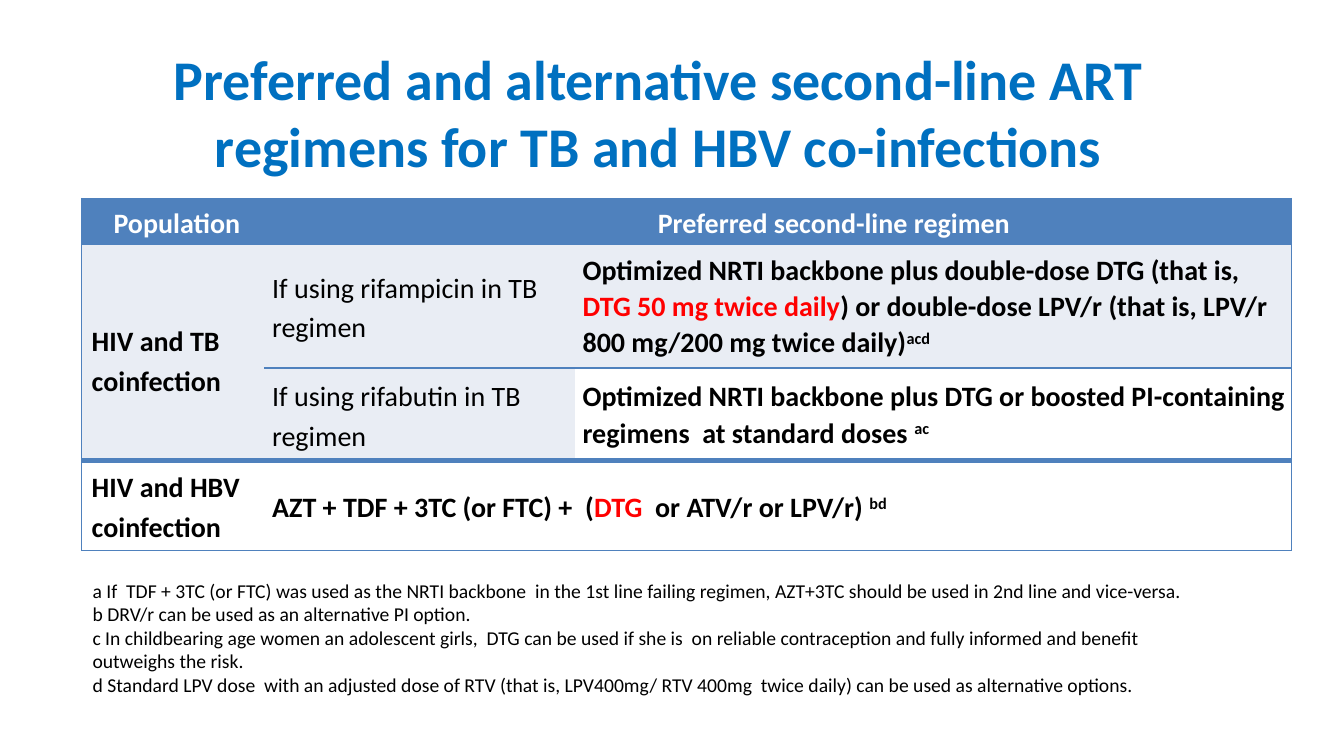
"""Build the slide on second-line ART regimens for TB and HBV co-infections."""
from dataclasses import dataclass

from lxml import etree
from pptx import Presentation
from pptx import util as u
from pptx.dml.color import RGBColor
from pptx.enum import text
from pptx.oxml import ns


@dataclass(frozen=True)
class Theme:
    """Colours, font and type sizes."""
    font: str = "Calibri"
    title: str = "0070C0"
    rule: str = "4F81BD"
    band: str = "E9EDF4"
    white: str = "FFFFFF"
    ink: str = "000000"
    accent: str = "FF0000"
    title_size: int = 40
    table_size: int = 20
    note_size: int = 14


class SlideBuilder:
    """Draw elements on one slide, measured on a grid of 160 columns by 90 rows."""

    def __init__(self, presentation, theme):
        """Add a blank slide and work out the grid."""
        self.theme = theme
        self.column = presentation.slide_width / 160
        self.row = presentation.slide_height / 90
        self.slide = presentation.slides.add_slide(presentation.slide_layouts[6])

    def place(self, left, top, width, height):
        """Turn grid units into slide lengths."""
        return (u.Emu(round(left * self.column)), u.Emu(round(top * self.row)),
                u.Emu(round(width * self.column)), u.Emu(round(height * self.row)))

    def style(self, paragraph, size, colour, bold=False):
        """Set the font of a whole paragraph."""
        font = paragraph.font
        font.name, font.size, font.bold = self.theme.font, u.Pt(size), bold
        font.color.rgb = RGBColor.from_string(colour)

    def text_box(self, area, lines, size, colour, bold=False, align=None, anchor=None):
        """Add a wrapped text box with one paragraph for each line."""
        frame = self.slide.shapes.add_textbox(*self.place(*area)).text_frame
        frame.word_wrap = True
        frame.vertical_anchor = anchor
        frame.text = "\n".join(lines)
        for paragraph in frame.paragraphs:
            paragraph.alignment = align
            self.style(paragraph, size, colour, bold)

    def table(self, left, top, widths, heights):
        """Add an empty table sized from its column widths and row heights."""
        area = self.place(left, top, sum(widths), sum(heights))
        table = self.slide.shapes.add_table(len(heights), len(widths), *area).table
        for column, width in zip(table.columns, widths):
            column.width = u.Emu(round(width * self.column))
        for row, height in zip(table.rows, heights):
            row.height = u.Emu(round(height * self.row))
        return table

    def borders(self, cell, weights):
        """Draw the left, right, top and bottom borders, where 0 means no line."""
        properties = cell._tc.get_or_add_tcPr()
        for side, weight in zip("LRTB", weights):
            line = etree.SubElement(properties, ns.qn(f"a:ln{side}"), w=str(u.Pt(weight)))
            if weight:
                fill = etree.SubElement(line, ns.qn("a:solidFill"))
                etree.SubElement(fill, ns.qn("a:srgbClr"), val=self.theme.rule)
            else:
                etree.SubElement(line, ns.qn("a:noFill"))

    def fill(self, cell, colour):
        """Fill a cell with one colour."""
        cell.fill.solid()
        cell.fill.fore_color.rgb = RGBColor.from_string(colour)

    def cell_text(self, cell, lines, colour, bold=True, align=None,
                  indent=0.08, top=0, spacing=1.15):
        """Write lines of (words, mark) runs, marked red or raised where needed."""
        cell.vertical_anchor = text.MSO_ANCHOR.MIDDLE
        cell.margin_left, cell.margin_top = u.Inches(indent), u.Inches(top)
        cell.margin_right = cell.margin_bottom = 0
        for number, runs in enumerate(lines):
            paragraph = cell.text_frame.add_paragraph() if number else cell.text_frame.paragraphs[0]
            paragraph.alignment = align
            paragraph.line_spacing = spacing
            paragraph.space_before = u.Pt(0.7 if number else 3.8)
            self.style(paragraph, self.theme.table_size, colour, bold)
            for words, mark in runs:
                run = paragraph.add_run()
                run.text = words
                if mark == "red":
                    run.font.color.rgb = RGBColor.from_string(self.theme.accent)
                elif mark == "raised":
                    run._r.get_or_add_rPr().set("baseline", "30000")


def regimen_table(builder):
    """Add the table of populations and preferred regimens."""
    theme = builder.theme
    table = builder.table(9.72, 23.64, (21.72, 36.96, 85.32), (5.4, 14.76, 11.04, 10.68))
    for first, last in (((0, 1), (0, 2)), ((1, 0), (2, 0)), ((3, 1), (3, 2))):
        table.cell(*first).merge(table.cell(*last))

    fills = ((theme.rule,) * 3, (theme.band,) * 3,
             (theme.band, theme.band, theme.white), (theme.white,) * 3)
    for row, colours in enumerate(fills):
        for column, colour in enumerate(colours):
            cell = table.cell(row, column)
            rules = (1, 1, 1 if column else 0, 4, 1)
            at_right = column + cell.span_width >= len(colours)
            builder.borders(cell, (int(column == 0), int(at_right), rules[row], rules[row + 1]))
            builder.fill(cell, colour)

    centre = text.PP_ALIGN.CENTER
    header = {"colour": theme.white, "align": centre}
    label = {"colour": theme.ink, "indent": 0.1}
    condition = {"colour": theme.ink, "bold": False}
    regimen = {"colour": theme.ink, "spacing": 1.06}
    contents = (
        (0, 0, [[("Population", "")]], header),
        (0, 1, [[("Preferred second-line regimen ", "")]], {**header, "indent": 1.18}),
        (1, 0, [[("HIV and TB", "")], [("coinfection", "")]], {**label, "top": 0.14}),
        (1, 1, [[("If using rifampicin in TB regimen", "")]], condition),
        (1, 2, [[("Optimized NRTI backbone plus double-dose DTG (that is, ", ""),
                 ("DTG 50 mg twice daily", "red"),
                 (") or double-dose LPV/r (that is, LPV/r 800 mg/200 mg twice daily)", ""),
                 ("acd", "raised")]], regimen),
        (2, 1, [[("If using rifabutin in TB regimen", "")]], condition),
        (2, 2, [[("Optimized NRTI backbone plus DTG or boosted PI-containing regimens"
                  "  at standard doses ", ""), ("ac", "raised")]], regimen),
        (3, 0, [[("HIV and HBV", "")], [("coinfection", "")]], label),
        (3, 1, [[("AZT + TDF + 3TC (or FTC) +  (", ""), ("DTG", "red"),
                 ("  or ATV/r or LPV/r) ", ""), ("bd", "raised")]], {"colour": theme.ink}),
    )
    for row, column, lines, look in contents:
        builder.cell_text(table.cell(row, column), lines, **look)


def main():
    """Build and save the presentation."""
    presentation = Presentation()
    presentation.slide_width, presentation.slide_height = u.Inches(13.33), u.Inches(7.5)
    theme = Theme()
    builder = SlideBuilder(presentation, theme)
    regimen_table(builder)
    notes = (
        "a If  TDF + 3TC (or FTC) was used as the NRTI backbone  in the 1st line failing regimen, "
        "AZT+3TC should be used in 2nd line and vice-versa.",
        "b DRV/r can be used as an alternative PI option.",
        "c In childbearing age women an adolescent girls,  DTG can be used if she is  on reliable "
        "contraception and fully informed and benefit outweighs the risk.",
        "d Standard LPV dose  with an adjusted dose of RTV (that is, LPV400mg/ RTV 400mg  "
        "twice daily) can be used as alternative options.",
    )
    builder.text_box((9.84, 68.28, 133.08, 15.36), notes, theme.note_size, theme.ink)
    builder.text_box((7.68, 4.32, 141.36, 17.88),
                     ["Preferred and alternative second-line ART regimens for TB and HBV co-infections"],
                     theme.title_size, theme.title, bold=True,
                     align=text.PP_ALIGN.CENTER, anchor=text.MSO_ANCHOR.MIDDLE)
    presentation.save("out.pptx")


if __name__ == "__main__":
    main()
